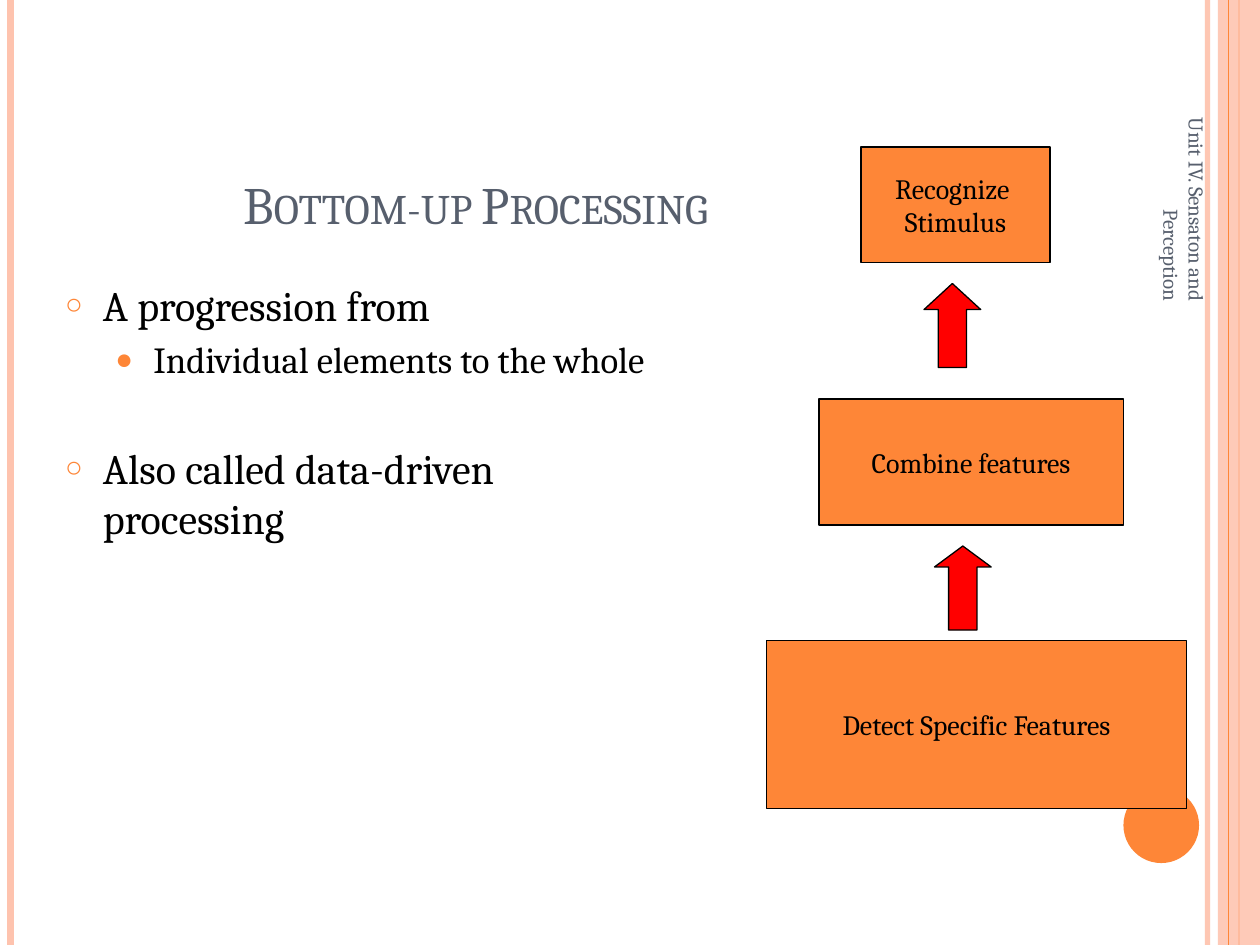
from lxml import etree
from pptx import Presentation
from pptx.dml.color import RGBColor
from pptx.enum import shapes, text
from pptx.oxml import ns
from pptx.util import Pt

COLORS = {
    "orange": "FE8637",
    "peach": "FEC3AE",
    "slate": "575F6D",
    "black": "000000",
    "red": "FF0000",
}


class Deck:
    font = "Cambria"

    def __init__(self, width, height):
        self.prs = Presentation()
        self.prs.slide_width, self.prs.slide_height = Pt(width), Pt(height)
        self.height = height
        self.s = self.prs.slides.add_slide(self.prs.slide_layouts[1])

    def rgb(self, name):
        return RGBColor.from_string(COLORS[name])

    def fade(self, sp, percent):
        clr = next(sp._element.spPr.iter(ns.qn("a:srgbClr")))
        etree.SubElement(clr, ns.qn("a:alpha")).set("val", str(percent * 1000))

    def style(self, p, size, color="black", align=text.PP_ALIGN.LEFT):
        p.alignment = align
        p.font.name, p.font.size = self.font, Pt(size)
        p.font.color.rgb = self.rgb(color)

    def place(self, sp, box):
        sp.left, sp.top, sp.width, sp.height = map(Pt, box)

    def stripe(self, x, width, color):
        ln = self.s.shapes.add_connector(
            shapes.MSO_CONNECTOR.STRAIGHT, Pt(x), 0, Pt(x), Pt(self.height))
        ln.line.width = Pt(width)
        ln.line.color.rgb = self.rgb(color)
        etree.SubElement(ln._element.spPr, ns.qn("a:effectLst"))
        return ln

    def shape(self, kind, box, fill, outlined=False):
        sp = self.s.shapes.add_shape(kind, *map(Pt, box))
        sp.shadow.inherit = False
        sp.fill.solid()
        sp.fill.fore_color.rgb = self.rgb(fill)
        if outlined:
            sp.line.color.rgb = self.rgb("black")
            sp.line.width = Pt(0.75)
        else:
            sp.line.fill.background()
        return sp

    def process(self, box, lines):
        sp = self.shape(shapes.MSO_SHAPE.FLOWCHART_PROCESS, box, "orange", True)
        tf = sp.text_frame
        tf.word_wrap = False
        tf.vertical_anchor = text.MSO_ANCHOR.MIDDLE
        tf.text = lines
        for p in tf.paragraphs:
            self.style(p, 16, align=text.PP_ALIGN.CENTER)

    def up_arrow(self, box, head):
        sp = self.shape(shapes.MSO_SHAPE.UP_ARROW, box, "red", True)
        sp.adjustments[1] = head

    def title(self, box, words):
        sp = self.s.shapes.title
        self.place(sp, box)
        tf = sp.text_frame
        tf.auto_size = text.MSO_AUTO_SIZE.NONE
        tf.vertical_anchor = text.MSO_ANCHOR.BOTTOM
        tf.text = words
        p = tf.paragraphs[0]
        self.style(p, 30, "slate")
        p.font._rPr.set("cap", "small")

    def bullet(self, p, char, percent, margin, hang):
        pPr = p._p.get_or_add_pPr()
        pPr.set("marL", str(Pt(margin)))
        pPr.set("indent", str(-Pt(hang)))
        clr = etree.Element(ns.qn("a:buClr"))
        etree.SubElement(clr, ns.qn("a:srgbClr")).set("val", COLORS["orange"])
        size = etree.Element(ns.qn("a:buSzPct"))
        size.set("val", str(percent * 1000))
        mark = etree.Element(ns.qn("a:buChar"))
        mark.set("char", char)
        at = pPr.index(pPr.find(ns.qn("a:defRPr")))
        pPr[at:at] = [clr, size, mark]

    def body(self, box, items):
        sp = self.s.placeholders[1]
        self.place(sp, box)
        tf = sp.text_frame
        tf.auto_size = text.MSO_AUTO_SIZE.NONE
        tf.text = "\n".join(words for words, _, _ in items)
        for p, (_, level, before) in zip(tf.paragraphs, items):
            p.level = level
            p.space_before = Pt(before)
            self.style(p, (24, 21)[level])
            self.bullet(p, "○●"[level], (70, 80)[level], (21.6, 50.4)[level], 21.6)

    def side_label(self, box, words):
        sp = self.s.shapes.add_textbox(*map(Pt, box))
        sp.rotation = 90
        tf = sp.text_frame
        tf.word_wrap = True
        tf.vertical_anchor = text.MSO_ANCHOR.MIDDLE
        tf.text = words
        self.style(tf.paragraphs[0], 12, "slate", text.PP_ALIGN.RIGHT)


def main():
    d = Deck(720, 540)

    d.fade(d.stripe(690, 3, "peach"), 93)
    d.stripe(6, 4.5, "peach")
    d.stripe(708, 1.5, "orange")
    d.fade(d.shape(shapes.MSO_SHAPE.RECTANGLE, (696, 0, 24, 540), "peach"), 87)
    d.stripe(702, 0.75, "orange")
    d.shape(shapes.MSO_SHAPE.OVAL, (642, 450, 43.2, 43.2), "orange")

    d.title((132, 36, 336, 102), "Bottom-up Processing")
    d.body((30, 156, 348, 324), [
        ("A progression from", 0, 6),
        ("Individual elements to the whole", 1, 4.2),
        ("Also called data-driven processing", 0, 35),
    ])
    d.side_label((597.6, 85, 158.4, 30), "Unit IV. Sensaton and Perception")

    d.process((438, 366, 240, 96), "Detect Specific Features")
    d.process((468, 228, 174, 72), "Combine features")
    d.process((492, 84, 108, 66), "Recognize \nStimulus")
    d.up_arrow((534, 312, 32.4, 48), 0.37)
    d.up_arrow((528, 162, 32.4, 48), 0.46)

    d.prs.save("out.pptx")


if __name__ == "__main__":
    main()
